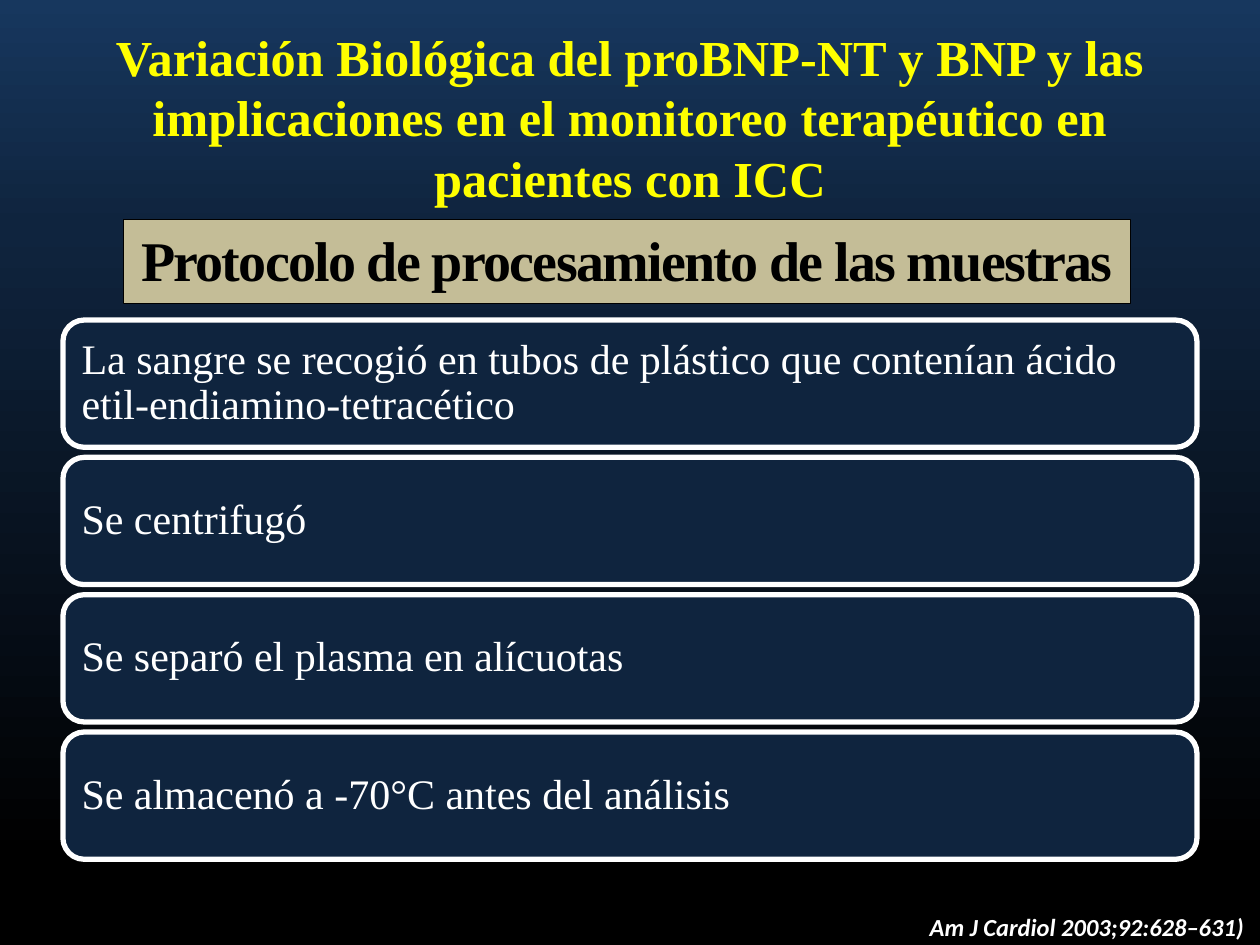
from copy import deepcopy

from pptx import Presentation
from pptx.dml.color import RGBColor
from pptx.enum.shapes import MSO_SHAPE
from pptx.enum.text import MSO_ANCHOR, MSO_AUTO_SIZE, PP_ALIGN
from pptx.util import Inches, Pt

RECTANGLE = MSO_SHAPE.RECTANGLE
ROUNDED_RECTANGLE = MSO_SHAPE.ROUNDED_RECTANGLE
TOP, MIDDLE = MSO_ANCHOR.TOP, MSO_ANCHOR.MIDDLE
NO_FIT, GROW = MSO_AUTO_SIZE.NONE, MSO_AUTO_SIZE.SHAPE_TO_FIT_TEXT
LEFT, CENTER = PP_ALIGN.LEFT, PP_ALIGN.CENTER

BLACK = RGBColor(0x00, 0x00, 0x00)
WHITE = RGBColor(0xFF, 0xFF, 0xFF)
YELLOW = RGBColor(0xFF, 0xFF, 0x00)
TAN = RGBColor(0xC4, 0xBD, 0x97)
NAVY = RGBColor(0x0F, 0x24, 0x3E)
BLUE = RGBColor(0x17, 0x37, 0x5E)

SERIF = "Times New Roman"
SANS = "Calibri"

TITLE = ("Variación Biológica del proBNP-NT y BNP y las implicaciones "
         "en el monitoreo terapéutico en pacientes con ICC")
STEPS = [
    "La sangre se recogió en tubos de plástico que contenían ácido "
    "etil-endiamino-tetracético",
    "Se centrifugó",
    "Se separó el plasma en alícuotas",
    "Se almacenó a -70°C antes del análisis",
]


def set_background(slide):
    fill = slide.background.fill
    fill.gradient()
    fill.gradient_angle = 270
    first_stop = slide.element.xpath(".//p:bg//a:gs")[0]
    first_stop.addnext(deepcopy(first_stop))
    stops = [(0, BLUE), (0.24, NAVY), (0.91, BLACK)]
    for stop, (position, color) in zip(fill.gradient_stops, stops):
        stop.position = position
        stop.color.rgb = color


def write_text(shape, text, size, color, font_name=SERIF, bold=False,
               italic=False, alignment=LEFT, anchor=MIDDLE, wrap=True):
    text_frame = shape.text_frame
    text_frame.text = text
    text_frame.word_wrap = wrap
    text_frame.vertical_anchor = anchor
    paragraph = text_frame.paragraphs[0]
    paragraph.alignment = alignment
    font = paragraph.runs[0].font
    font.name, font.size = font_name, Pt(size)
    font.bold, font.italic = bold, italic
    font.color.rgb = color
    return paragraph


def add_panel(slide, kind, box, fill_color, line_color, line_width):
    shape = slide.shapes.add_shape(kind, *map(Inches, box))
    shape.shadow.inherit = False
    shape.fill.solid()
    shape.fill.fore_color.rgb = fill_color
    shape.line.color.rgb = line_color
    shape.line.width = Pt(line_width)
    return shape


def place_title(slide, box):
    title = slide.shapes.title
    title.left, title.top, title.width, title.height = map(Inches, box)
    write_text(title, TITLE, 28.8, YELLOW, bold=True, alignment=CENTER)
    title.text_frame.auto_size = NO_FIT


def add_banner(slide, box):
    banner = add_panel(slide, RECTANGLE, box, TAN, BLACK, 0.75)
    paragraph = write_text(banner, "Protocolo de procesamiento de las muestras",
                           32, BLACK, bold=True, alignment=CENTER,
                           anchor=TOP, wrap=False)
    paragraph.runs[0].font._element.set("spc", "-100")


def add_steps(slide, box, gap=0.08):
    left, top, width, height = box
    step_height = (height - gap * (len(STEPS) - 1)) / len(STEPS)
    for index, text in enumerate(STEPS):
        step_top = top + index * (step_height + gap)
        step = add_panel(slide, ROUNDED_RECTANGLE,
                         (left, step_top, width, step_height), NAVY, WHITE, 3)
        text_frame = step.text_frame
        text_frame.margin_left = text_frame.margin_right = Inches(0.1)
        text_frame.margin_top = text_frame.margin_bottom = Inches(0.1)
        paragraph = write_text(step, text, 24, WHITE)
        paragraph.line_spacing = 0.9


def add_citation(slide, box):
    citation = slide.shapes.add_textbox(*map(Inches, box))
    write_text(citation, "Am J Cardiol 2003;92:628–631)", 14, WHITE, SANS,
               bold=True, italic=True, anchor=TOP, wrap=False)
    citation.text_frame.auto_size = GROW


def main():
    presentation = Presentation()
    presentation.slide_width = Inches(10)
    presentation.slide_height = Inches(7.5)
    slide = presentation.slides.add_slide(presentation.slide_layouts[5])
    set_background(slide)
    place_title(slide, (0.5, 0.3, 9, 1.25))
    add_banner(slide, (0.98, 1.74, 7.99, 0.67))
    add_citation(slide, (7.28, 7.19, 2.72, 0.34))
    add_steps(slide, (0.5, 2.54, 9, 4.28))
    presentation.save("out.pptx")


if __name__ == "__main__":
    main()
